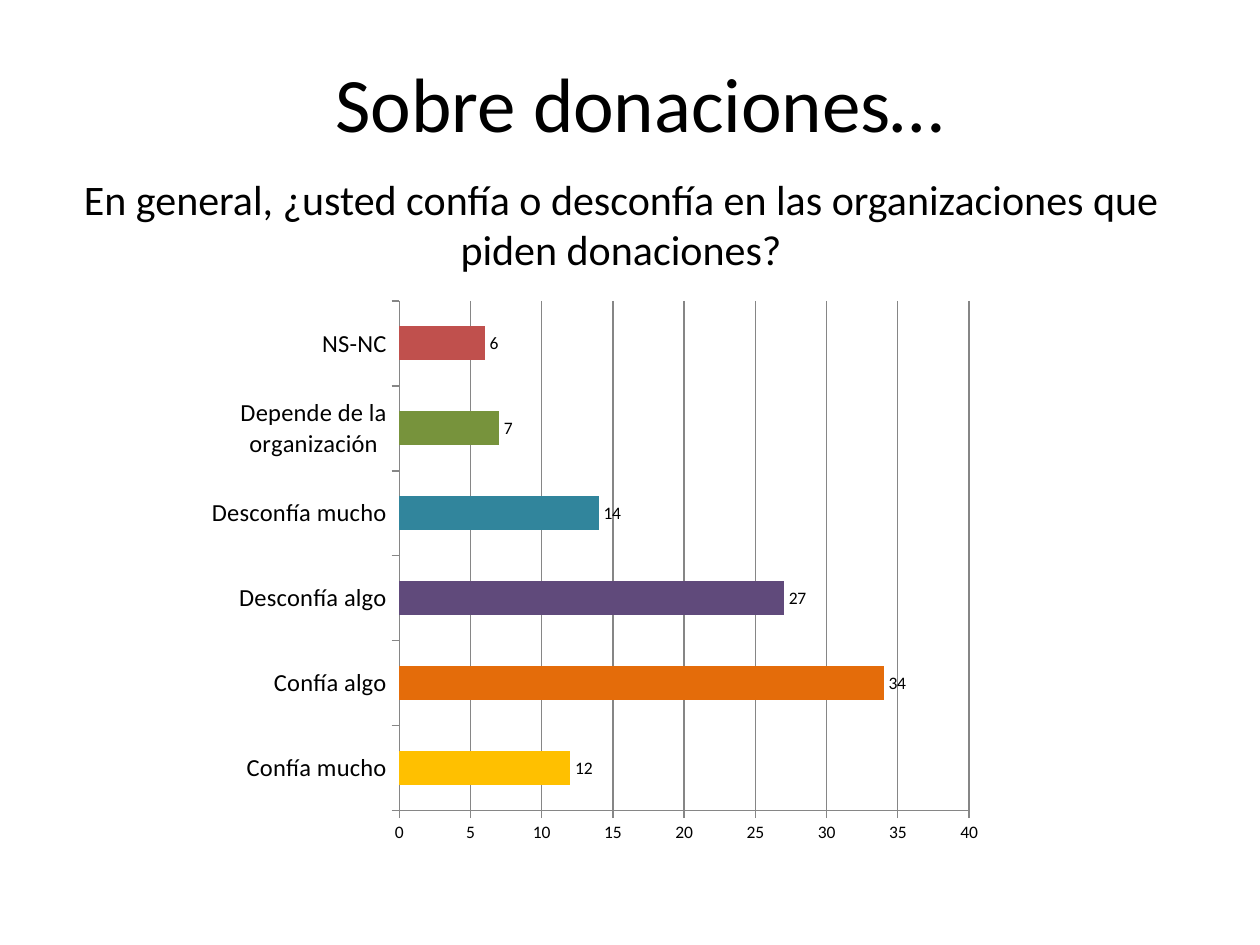
from lxml.etree import SubElement
from pptx import Presentation
from pptx.chart.data import CategoryChartData
from pptx.dml.color import RGBColor
from pptx.enum.chart import XL_CHART_TYPE, XL_LABEL_POSITION, XL_TICK_MARK
from pptx.enum.text import MSO_ANCHOR, PP_ALIGN
from pptx.oxml.ns import qn
from pptx.util import Inches, Pt

# Content
TITLE = "Sobre donaciones…"
ASK = ("En general, ¿usted confía o desconfía en las organizaciones "
       "que piden donaciones?")
BARS = [
    ("Confía mucho", 12, "FFC000"),
    ("Confía algo", 34, "E46C0A"),
    ("Desconfía algo", 27, "604A7B"),
    ("Desconfía mucho", 14, "31859C"),
    ("Depende de la organización", 7, "77933C"),
    ("NS-NC", 6, "C0504D"),
]
PLOT = {"x": 0.26, "y": 0.03, "w": 0.58, "h": 0.87}
FONT, INK, GREY = "Calibri", "000000", "868686"


def color(code):
    return RGBColor.from_string(code)


def style(font, size):
    font.name, font.size = FONT, Pt(size)
    font.color.rgb = color(INK)


def add_text(slide, text, box, size=24):
    frame = slide.shapes.add_textbox(*map(Inches, box)).text_frame
    frame.word_wrap = True
    frame.vertical_anchor = MSO_ANCHOR.MIDDLE
    para = frame.paragraphs[0]
    para.alignment = PP_ALIGN.CENTER
    run = para.add_run()
    run.text = text
    style(run.font, size)


def set_plot(chart):
    """Fix the inner plot area as shares of the chart."""
    area = chart.plots[0]._element.getparent()
    old = area.find(qn("c:layout"))
    if old is not None:
        area.remove(old)
    lay = area.makeelement(qn("c:layout"))
    area.insert(0, lay)
    man = SubElement(lay, qn("c:manualLayout"))
    parts = [("layoutTarget", "inner"), ("xMode", "edge"), ("yMode", "edge")]
    for name, val in parts + list(PLOT.items()):
        SubElement(man, qn("c:" + name)).set("val", str(val))


def add_bars(slide, box):
    data = CategoryChartData(number_format="0")
    data.categories = [name for name, _, _ in BARS]
    data.add_series("Series 1", [val for _, val, _ in BARS])
    chart = slide.shapes.add_chart(
        XL_CHART_TYPE.BAR_CLUSTERED, *map(Inches, box), data).chart
    chart.has_legend = chart.has_title = False
    style(chart.font, 10)
    set_plot(chart)

    # Bars and their labels
    plot = chart.plots[0]
    plot.gap_width = 150
    plot.vary_by_categories = False
    for i, (_, _, code) in enumerate(BARS):
        fill = plot.series[0].points[i].format.fill
        fill.solid()
        fill.fore_color.rgb = color(code)
    plot.has_data_labels = True
    tags = plot.data_labels
    tags.show_value = True
    tags.number_format, tags.number_format_is_linked = "0", False
    tags.position = XL_LABEL_POSITION.OUTSIDE_END
    style(tags.font, 10)

    # Axes
    cat, val = chart.category_axis, chart.value_axis
    val.minimum_scale, val.maximum_scale, val.major_unit = 0, 40, 5
    val.has_major_gridlines = True
    val.tick_labels.number_format = "0"
    val.tick_labels.number_format_is_linked = False
    for axis, size in ((cat, 14), (val, 10)):
        axis.major_tick_mark = XL_TICK_MARK.OUTSIDE
        style(axis.tick_labels.font, size)
    for part in (cat, val, val.major_gridlines):
        part.format.line.color.rgb = color(GREY)
        part.format.line.width = Pt(0.75)


def main():
    deck = Presentation()
    deck.slide_width, deck.slide_height = Inches(10), Inches(7.5)
    slide = deck.slides.add_slide(deck.slide_layouts[6])
    add_text(slide, ASK, (0.43, 1.15, 9, 1.25))
    add_bars(slide, (1.14, 2.25, 7.8, 4.65))
    add_text(slide, TITLE, (0.83, 0, 8.5, 1.61), size=44)
    deck.save("out.pptx")


if __name__ == "__main__":
    main()
